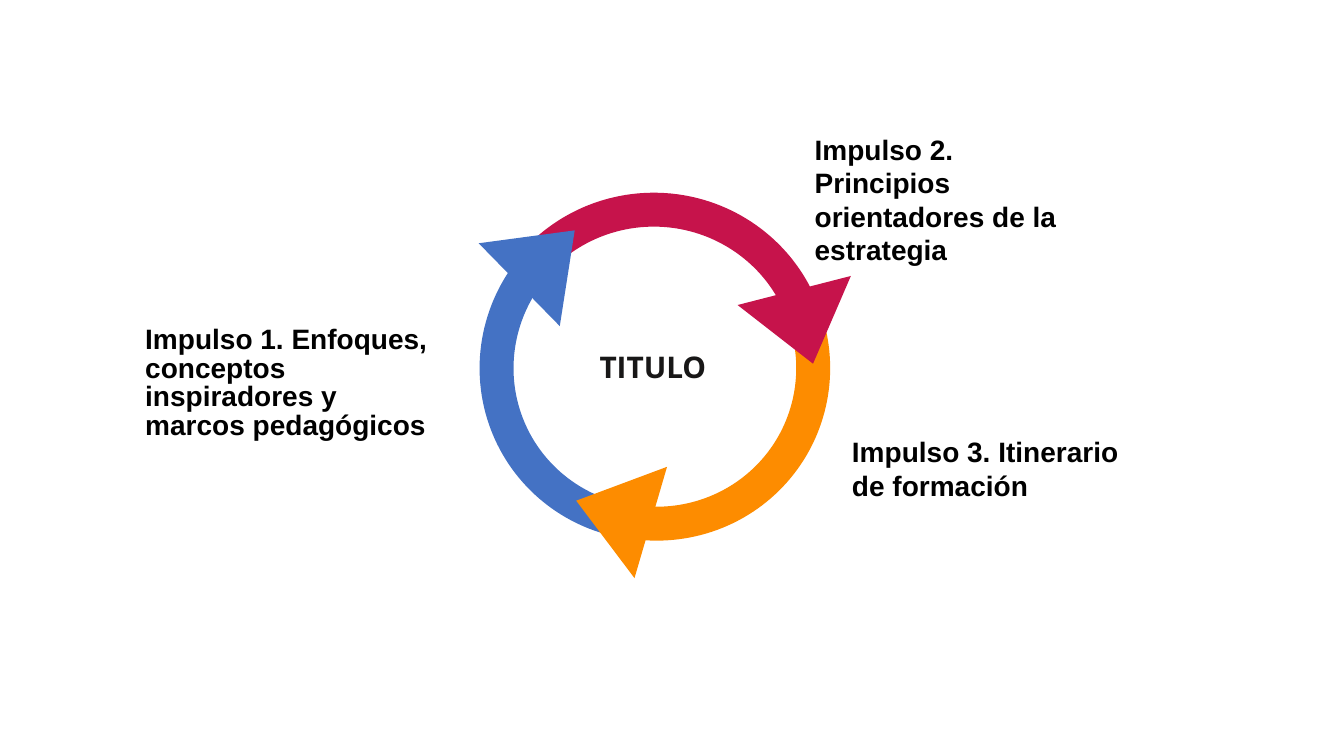
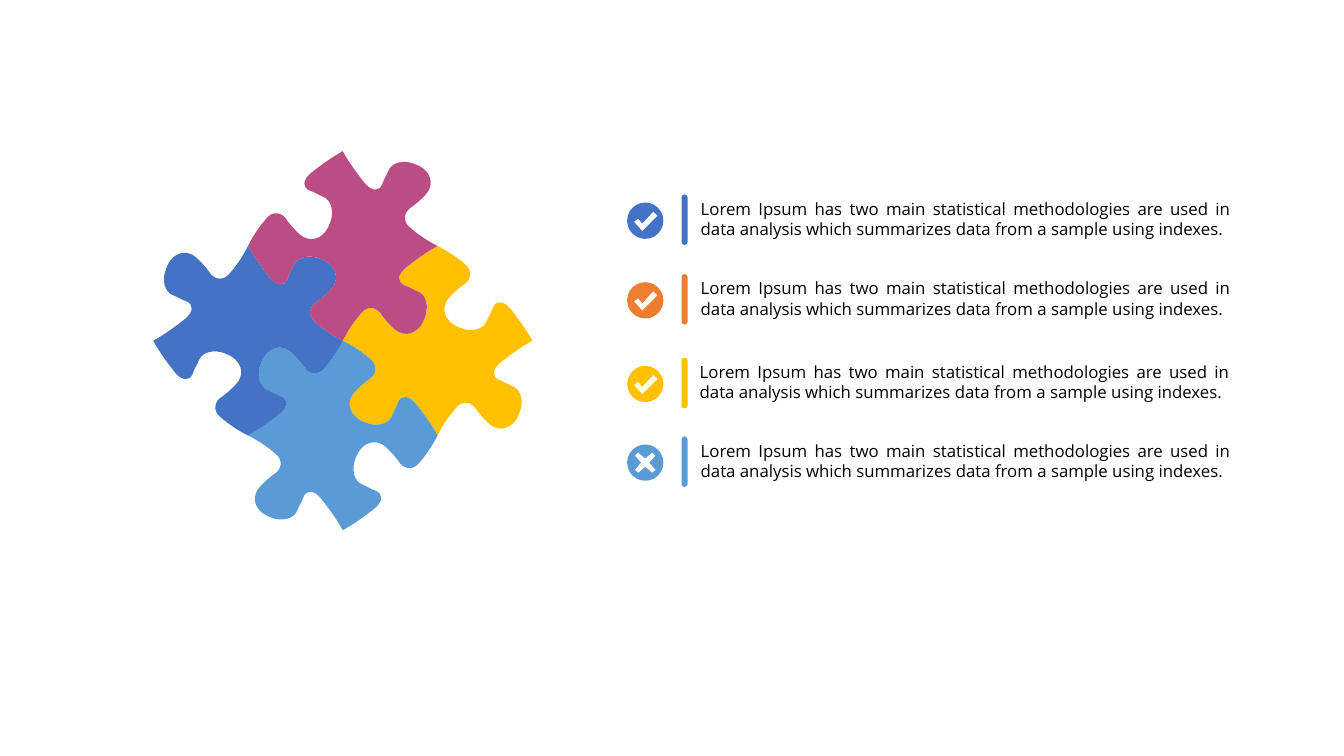
from dataclasses import dataclass

import pptx
import pptx.dml.color
import pptx.enum.shapes
import pptx.enum.text
import pptx.oxml.ns
import pptx.util

SHAPE = pptx.enum.shapes.MSO_SHAPE
ALIGN = pptx.enum.text.PP_ALIGN
ANCHOR = pptx.enum.text.MSO_ANCHOR


@dataclass(frozen=True)
class Theme:
    blue: str = "4472C4"
    sky: str = "5B9BD5"
    amber: str = "FFC000"
    orange: str = "FD8C00"
    rust: str = "ED7D31"
    crimson: str = "C6134B"
    plum: str = "BB4D84"
    white: str = "FFFFFF"
    black: str = "000000"
    ink: str = "181717"
    caption_font: str = "Arial"
    body_font: str = "Open Sans"
    title_size: float = 21.3
    caption_size: float = 20
    body_size: float = 12
    ring_width: float = 24.25


THEME = Theme()
COLUMNS, ROWS = 13.33, 7.5
CELL = pptx.util.Inches(1)

LOREM = ("Lorem Ipsum has two main statistical methodologies are used in data "
         "analysis which summarizes data from a sample using indexes.")

PIECE_RADIUS = 0.94
# Bezier points of one puzzle tab, from the right corner of a piece to its bottom.
TAB_CURVE = [
    (0.94, 0), (0.83, 0.06), (0.72, 0.14), (0.62, 0.22), (0.54, 0.29),
    (0.54, 0.36), (0.61, 0.39), (0.67, 0.41), (0.71, 0.44), (0.74, 0.45),
    (0.83, 0.48), (0.86, 0.61), (0.81, 0.72), (0.77, 0.84), (0.66, 0.9),
    (0.57, 0.86), (0.53, 0.85), (0.46, 0.78), (0.39, 0.69), (0.34, 0.6),
    (0.24, 0.59), (0.18, 0.67), (0.11, 0.75), (0.05, 0.84), (0, 0.94),
]
ICON_SIZE = 0.36
CHECK = [(-0.03, 0.1), (-0.11, 0.01), (-0.07, -0.02),
         (-0.03, 0.03), (0.08, -0.09), (0.12, -0.05)]
CROSS_ARM = [(0.04, 0), (0.1, 0.07), (0.07, 0.1)]


def grid(*counts):
    """Turn counts of columns or rows into slide lengths."""
    return [round(count * CELL) for count in counts]


def color(code):
    return pptx.dml.color.RGBColor.from_string(code)


def turn(points, quarters):
    """Rotate points clockwise about the origin by quarter turns."""
    for _ in range(quarters):
        points = [(-y, x) for x, y in points]
    return points


def move(points, dx, dy):
    return [(x + dx, y + dy) for x, y in points]


def paint(shape, fill):
    shape.shadow.inherit = False
    shape.fill.solid()
    shape.fill.fore_color.rgb = color(fill)
    shape.line.fill.background()


def add_solid(page, kind, at, fill, rotation=0):
    shape = page.shapes.add_shape(kind, *grid(*at))
    paint(shape, fill)
    shape.rotation = rotation
    return shape


def add_outline(page, points, fill):
    first, *others = [grid(*point) for point in points]
    builder = page.shapes.build_freeform(*first)
    builder.add_line_segments(others, close=True)
    shape = builder.convert_to_shape()
    paint(shape, fill)
    return shape


def curve_outline(shape):
    """Merge every three straight segments into one cubic Bezier curve."""
    qn = pptx.oxml.ns.qn
    lines = list(shape.element.iter(qn("a:lnTo")))
    for first in range(0, len(lines), 3):
        curve = lines[first].makeelement(qn("a:cubicBezTo"))
        lines[first].addprevious(curve)
        for line in lines[first:first + 3]:
            curve.append(line[0])
            line.getparent().remove(line)


def add_arc(page, at, rotation, angles, line):
    arc = page.shapes.add_shape(SHAPE.ARC, *grid(*at))
    arc.shadow.inherit = False
    arc.fill.background()
    arc.line.color.rgb = color(line)
    arc.line.width = pptx.util.Pt(THEME.ring_width)
    arc.adjustments[0], arc.adjustments[1] = angles
    arc.rotation = rotation


def add_text(page, at, text, font, size, ink, bold=False, insets=(0, 0, 0, 0),
             align=ALIGN.LEFT, anchor=ANCHOR.TOP, spacing=1.0):
    box = page.shapes.add_textbox(*grid(*at))
    frame = box.text_frame
    frame.word_wrap = True
    frame.vertical_anchor = anchor
    (frame.margin_left, frame.margin_top,
     frame.margin_right, frame.margin_bottom) = grid(*insets)
    frame.text = text
    para = frame.paragraphs[0]
    para.alignment = align
    para.line_spacing = spacing
    span = para.runs[0]
    span.font.name = font
    span.font.size = pptx.util.Pt(size)
    span.font.bold = bold
    span.font.color.rgb = color(ink)
    return box


def add_caption(page, left, top, text, indent=0.0, spacing=1.0):
    box = add_text(page, (left, top, 2.81, 1.37), text, THEME.caption_font,
                   THEME.caption_size, THEME.black, bold=True,
                   insets=(indent, 0, 0, 0), spacing=spacing)
    paint(box, THEME.white)


def add_piece(page, quarters, fill):
    """Puzzle piece lying the given quarter turns clockwise from the right."""
    slot = move(TAB_CURVE[::-1], -PIECE_RADIUS, -PIECE_RADIUS)
    outline = (TAB_CURVE + turn(TAB_CURVE, 1)[1:]
               + slot[1:] + turn(slot, 1)[1:])
    placed = turn(move(outline, PIECE_RADIUS, 0), quarters)
    curve_outline(add_outline(page, move(placed, 3.4, 3.38), fill))


def add_icon(page, x, y, mark, fill):
    corner = (x - ICON_SIZE / 2, y - ICON_SIZE / 2)
    add_solid(page, SHAPE.OVAL, (*corner, ICON_SIZE, ICON_SIZE), fill)
    add_outline(page, move(mark, x, y), THEME.white)


def add_point(page, left, top, mark, fill):
    add_text(page, (left, top, 5.5, 0.53), LOREM, THEME.body_font, THEME.body_size,
             THEME.black, insets=(0.12, 0.06, 0.12, 0.06), align=ALIGN.JUSTIFY)
    bar = add_solid(page, SHAPE.ROUNDED_RECTANGLE, (6.76, top + 0.02, 0.06, 0.5), fill)
    bar.adjustments[0] = 0.5
    add_icon(page, 6.4, top + 0.28, mark, fill)


def build_cycle(page):
    tall = (4.94, 2.06, 3.11, 3.15)
    add_arc(page, tall, 120, (130.37, 203.42), THEME.orange)
    add_arc(page, (4.91, 2.08, 3.15, 3.11), 0, (131.25, 203.19), THEME.crimson)
    add_arc(page, tall, 240, (130.1, 204.38), THEME.blue)
    for at, rotation, fill in [
        ((7.39, 2.87, 1.16, 0.75), 165.6, THEME.crimson),
        ((4.85, 2.17, 1.15, 0.77), 45.6, THEME.blue),
        ((5.51, 4.69, 1.15, 0.77), 286.3, THEME.orange),
    ]:
        add_solid(page, SHAPE.ISOSCELES_TRIANGLE, at, fill, rotation)

    add_caption(page, 1.44, 3.24, "Impulso 1. Enfoques, conceptos inspiradores y "
                "marcos pedagógicos", spacing=0.85)
    add_text(page, (5.38, 2.78, 2.19, 1.72), "TITULO", THEME.body_font,
             THEME.title_size, THEME.ink, bold=True, align=ALIGN.CENTER,
             anchor=ANCHOR.MIDDLE)
    add_caption(page, 8.06, 1.31, "Impulso 2. Principios orientadores de la estrategia",
                indent=0.02)
    add_caption(page, 8.43, 4.31, "Impulso 3. Itinerario de formación", indent=0.02)


def build_puzzle(page):
    for quarters, fill in enumerate([THEME.amber, THEME.sky, THEME.blue, THEME.plum]):
        add_piece(page, quarters, fill)
    cross = [point for quarters in range(4) for point in turn(CROSS_ARM, quarters)]
    for left, top, mark, fill in [
        (6.83, 1.91, CHECK, THEME.blue),
        (6.83, 2.7, CHECK, THEME.rust),
        (6.82, 3.53, CHECK, THEME.amber),
        (6.83, 4.31, cross, THEME.sky),
    ]:
        add_point(page, left, top, mark, fill)


def main():
    deck = pptx.Presentation()
    deck.slide_width, deck.slide_height = grid(COLUMNS, ROWS)
    blank = deck.slide_layouts[6]
    for build in (build_cycle, build_puzzle):
        build(deck.slides.add_slide(blank))
    deck.save("out.pptx")


if __name__ == "__main__":
    main()
